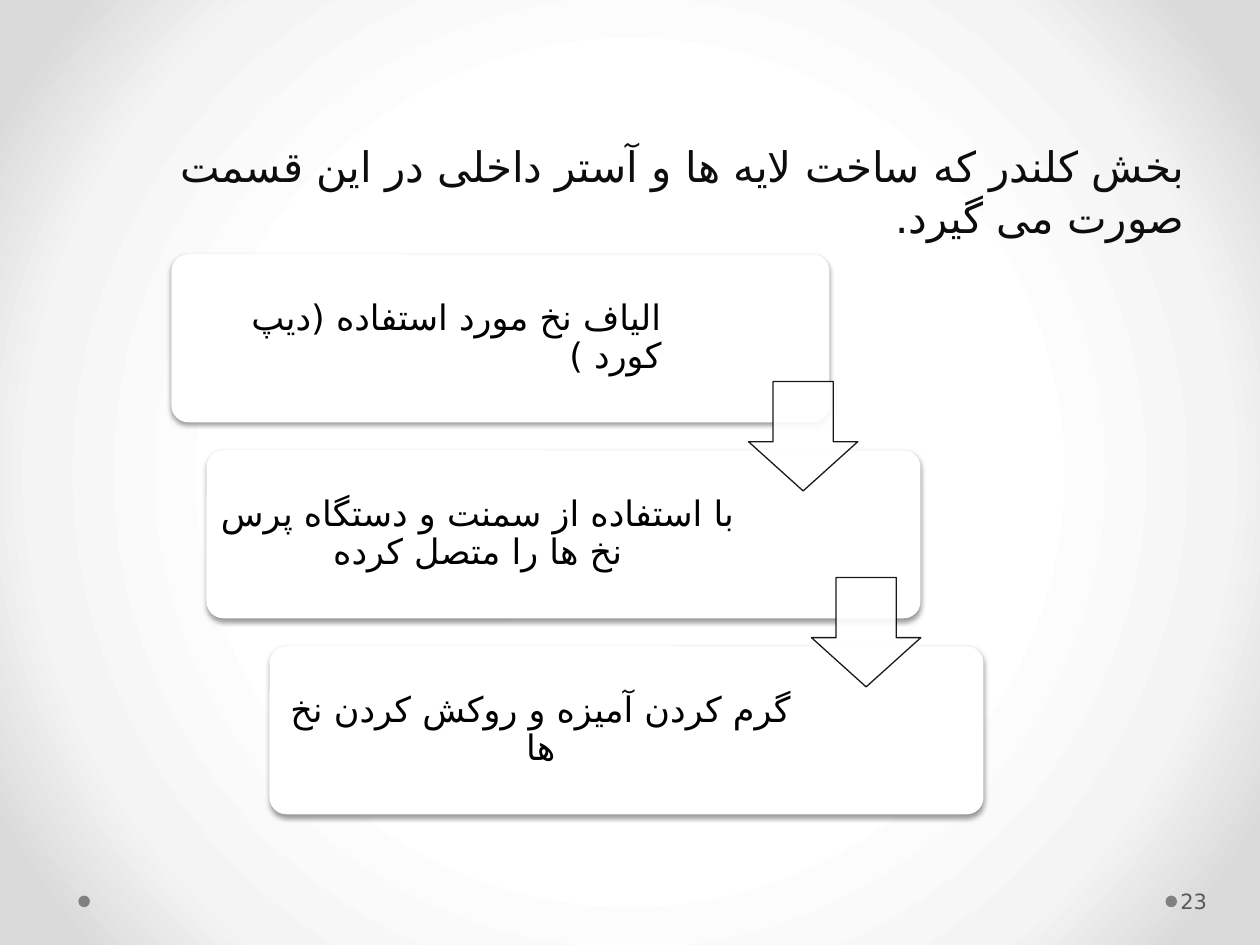
from pptx import Presentation
from pptx import util as u
from pptx.dml.color import RGBColor
from pptx.enum import shapes, text
from pptx.oxml import parse_xml
from pptx.oxml.ns import nsdecls, qn

Pt = u.Pt
RIGHT, CENTER, LEFT = text.PP_ALIGN.RIGHT, text.PP_ALIGN.CENTER, text.PP_ALIGN.LEFT
MIDDLE, TOP = text.MSO_ANCHOR.MIDDLE, text.MSO_ANCHOR.TOP
ARABIC_FONT = "DejaVu Sans"


def color(hex_string):
    return RGBColor.from_string(hex_string)


def add_text(words, *, at, size, font, ink, align, anchor=MIDDLE,
             insets=(6, 6, 6, 6), line_spacing=None, space_before=None):
    """Add a wrapped right-to-left text box."""
    box = page.shapes.add_textbox(*map(Pt, at))
    frame = box.text_frame
    frame.word_wrap = True
    frame.vertical_anchor = anchor
    (frame.margin_left, frame.margin_top,
     frame.margin_right, frame.margin_bottom) = map(Pt, insets)
    para = frame.paragraphs[0]
    para.alignment = align
    para.line_spacing = line_spacing
    para.space_before = space_before
    para._p.get_or_add_pPr().set("rtl", "1")
    span = para.add_run()
    span.text = words
    span.font.size = Pt(size)
    span.font.name = font
    span.font.color.rgb = color(ink)
    span.font._element.append(parse_xml(f'<a:cs {nsdecls("a")} typeface="{ARABIC_FONT}"/>'))


deck = Presentation()
deck.slide_width, deck.slide_height = Pt(720), Pt(540)
page = deck.slides.add_slide(deck.slide_layouts[6])

# Background: circular gradient from a white centre
page.background.fill.gradient()
gradient = page.element.find(".//" + qn("a:gradFill"))
stops = "".join(
    f'<a:gs pos="{percent * 1000}"><a:srgbClr val="{shade}"/></a:gs>'
    for percent, shade in [(50, "FFFFFF"), (76, "F4F4F4"), (92, "DADADA")])
gradient.getparent().replace(gradient, parse_xml(
    f'<a:gradFill {nsdecls("a")} rotWithShape="1"><a:gsLst>{stops}</a:gsLst>'
    '<a:path path="circle"><a:fillToRect l="50000" t="50000" r="50000" b="50000"/>'
    '</a:path></a:gradFill>'))

# Footer dots
for left in (666, 44.8):
    dot = page.shapes.add_shape(shapes.MSO_SHAPE.OVAL, Pt(left), Pt(511.8), Pt(6.6), Pt(6.6))
    dot.shadow.inherit = False
    dot.fill.solid()
    dot.fill.fore_color.rgb = color("808080")
    dot.line.fill.background()

# Heading sentence and page number
add_text("بخش کلندر که ساخت لایه ها و آستر داخلی در این قسمت صورت می گیرد.",
         at=(36, 77, 648, 405), size=24, font="League Spartan", ink="0D0D0D",
         align=RIGHT, anchor=TOP, insets=(7.2, 3.6, 7.2, 3.6), space_before=Pt(4.8))
add_text("23", at=(672.5, 500.4, 44, 28.8), size=12, font="League Spartan",
         ink="595959", align=LEFT, insets=(2, 3.6, 3.6, 3.6))

# Step cards
STEP = 112
cards = [
    (98, 376, 286, RIGHT, "الياف نخ مورد استفاده (ديپ کورد ) "),
    (118, 408, 310, CENTER, "با استفاده از سمنت و دستگاه پرس نخ ها را متصل کرده"),
    (154, 408, 310, CENTER, "گرم کردن آمیزه و روکش کردن نخ ها"),
]
for index, (left, width, text_width, align, words) in enumerate(cards):
    top = 145.3 + index * STEP
    card = page.shapes.add_shape(shapes.MSO_SHAPE.ROUNDED_RECTANGLE,
                                 Pt(left), Pt(top), Pt(width), Pt(96))
    card.adjustments[0] = 0.1
    card.fill.solid()
    card.fill.fore_color.rgb = color("FFFFFF")
    card.line.fill.background()
    card._element.spPr.append(parse_xml(
        f'<a:effectLst {nsdecls("a")}><a:outerShdw blurRad="{Pt(3.1)}" dist="{Pt(1.6)}" '
        'dir="5400000" rotWithShape="0"><a:srgbClr val="000000"><a:alpha val="38000"/>'
        '</a:srgbClr></a:outerShdw></a:effectLst>'))
    add_text(words, at=(left, top, text_width, 96), size=20, font="Vollkorn",
             ink="000000", align=align, line_spacing=0.9)

# Arrows between the cards, slightly see-through
for index in range(len(cards) - 1):
    arrow = page.shapes.add_shape(shapes.MSO_SHAPE.DOWN_ARROW, Pt(427.7 + 36 * index),
                                  Pt(218 + STEP * index), Pt(62.5), Pt(62.5))
    arrow.adjustments[0], arrow.adjustments[1] = 0.55, 0.45
    arrow.shadow.inherit = False
    arrow.fill.solid()
    arrow.fill.fore_color.rgb = color("FFFFFF")
    arrow.line.color.rgb = color("000000")
    arrow.line.width = Pt(0.75)
    for shade in arrow._element.spPr.iter(qn("a:srgbClr")):
        shade.append(parse_xml(f'<a:alpha {nsdecls("a")} val="90000"/>'))

deck.save("out.pptx")
